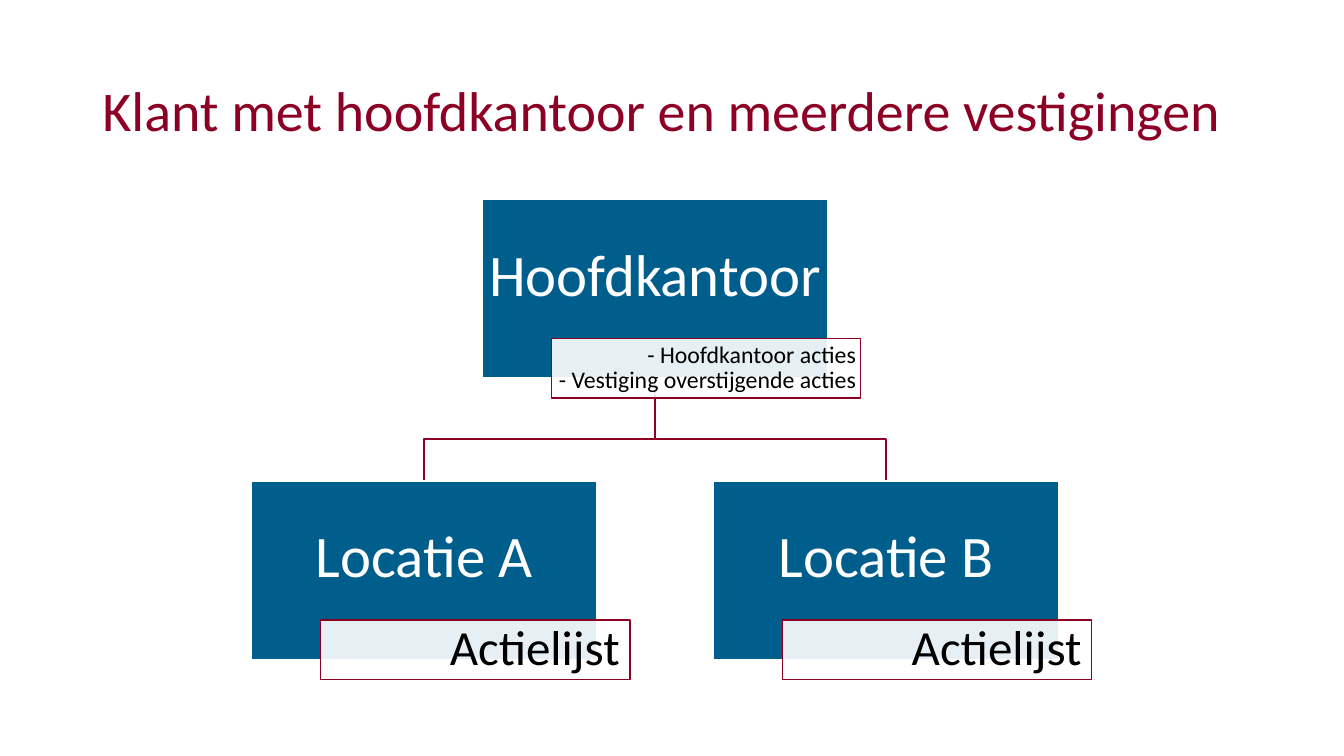
from lxml.etree import SubElement
from pptx import Presentation
from pptx.dml.color import RGBColor
from pptx.enum.shapes import MSO_SHAPE as Shape
from pptx.enum.text import MSO_ANCHOR as Anchor, PP_ALIGN as Align
from pptx.oxml.ns import qn
from pptx.util import Cm, Pt

TITLE = "Klant met hoofdkantoor en meerdere vestigingen"
HEAD_OFFICE = ("Hoofdkantoor", "- Hoofdkantoor acties\n- Vestiging overstijgende acties", 17, 0.12)
LOCATIONS = [("Locatie A", "Actielijst", 35, 0.25), ("Locatie B", "Actielijst", 35, 0.25)]
COLORS = {"blue": "005E8D", "red": "8D0026", "white": "FFFFFF", "black": "000000"}

CENTER = 16.51
HEAD_TOP, LOCATION_TOP, BEND = 5.03, 12.12, 11.06
BOX_W, BOX_H = 8.69, 4.5
TAG_W, TAG_H = 7.8, 1.5
TAG_DX, TAG_DY = 1.73, 3.5
LOCATION_STEP = 11.64


def color(name):
    return RGBColor.from_string(COLORS[name])


def write(frame, text, size, ink, align, margins, after=0):
    frame.word_wrap = True
    frame.vertical_anchor = Anchor.MIDDLE
    frame.margin_left, frame.margin_top, frame.margin_right, frame.margin_bottom = map(Cm, margins)
    line = frame.paragraphs[0]
    line.text = text
    line.alignment = align
    line.line_spacing = 0.9
    line.space_before = Pt(0)
    line.space_after = Pt(after)
    for run in line.runs:
        run.font.name = "Calibri"
        run.font.size = Pt(size)
        run.font.color.rgb = color(ink)


def add_box(left, top, width, height, fill, outline, opacity=100):
    box = slide.shapes.add_shape(Shape.RECTANGLE, Cm(left), Cm(top), Cm(width), Cm(height))
    box.shadow.inherit = False
    box.fill.solid()
    box.fill.fore_color.rgb = color(fill)
    box.line.color.rgb = color(outline)
    box.line.width = Pt(1)
    if opacity < 100:
        shade = box.fill._xPr.find(qn("a:solidFill"))[0]
        SubElement(shade, qn("a:alpha")).set("val", str(opacity * 1000))
    return box


def add_office(center, top, office):
    name, actions, size, side = office
    left = center - BOX_W / 2
    box = add_box(left, top, BOX_W, BOX_H, "blue", "white")
    write(box.text_frame, name, 42, "white", Align.CENTER, (0.07, 0.07, 0.07, 0.64))
    tag = add_box(left + TAG_DX, top + TAG_DY, TAG_W, TAG_H, "white", "red", opacity=90)
    write(tag.text_frame, actions, size, "black", Align.RIGHT, (side, 0.04, side, 0.04))


def add_branch(center):
    start, *rest = [(CENTER, HEAD_TOP + BOX_H), (CENTER, BEND), (center, BEND), (center, LOCATION_TOP)]
    builder = slide.shapes.build_freeform(Cm(start[0]), Cm(start[1]))
    builder.add_line_segments([(Cm(x), Cm(y)) for x, y in rest], close=False)
    branch = builder.convert_to_shape()
    branch.shadow.inherit = False
    branch.fill.background()
    branch.line.color.rgb = color("red")
    branch.line.width = Pt(1)


deck = Presentation()
deck.slide_width, deck.slide_height = Cm(33.87), Cm(19.05)
slide = deck.slides.add_slide(deck.slide_layouts[5])

title = slide.shapes.title
title.left, title.top, title.width, title.height = Cm(2.33), Cm(1.01), Cm(29.21), Cm(3.68)
write(title.text_frame, TITLE, 40, "red", Align.LEFT, (0.25, 0.13, 0.25, 0.13))

centers = [CENTER + (i - (len(LOCATIONS) - 1) / 2) * LOCATION_STEP for i in range(len(LOCATIONS))]
for center in reversed(centers):
    add_branch(center)
add_office(CENTER, HEAD_TOP, HEAD_OFFICE)
for center, location in zip(centers, LOCATIONS):
    add_office(center, LOCATION_TOP, location)

deck.save("out.pptx")
